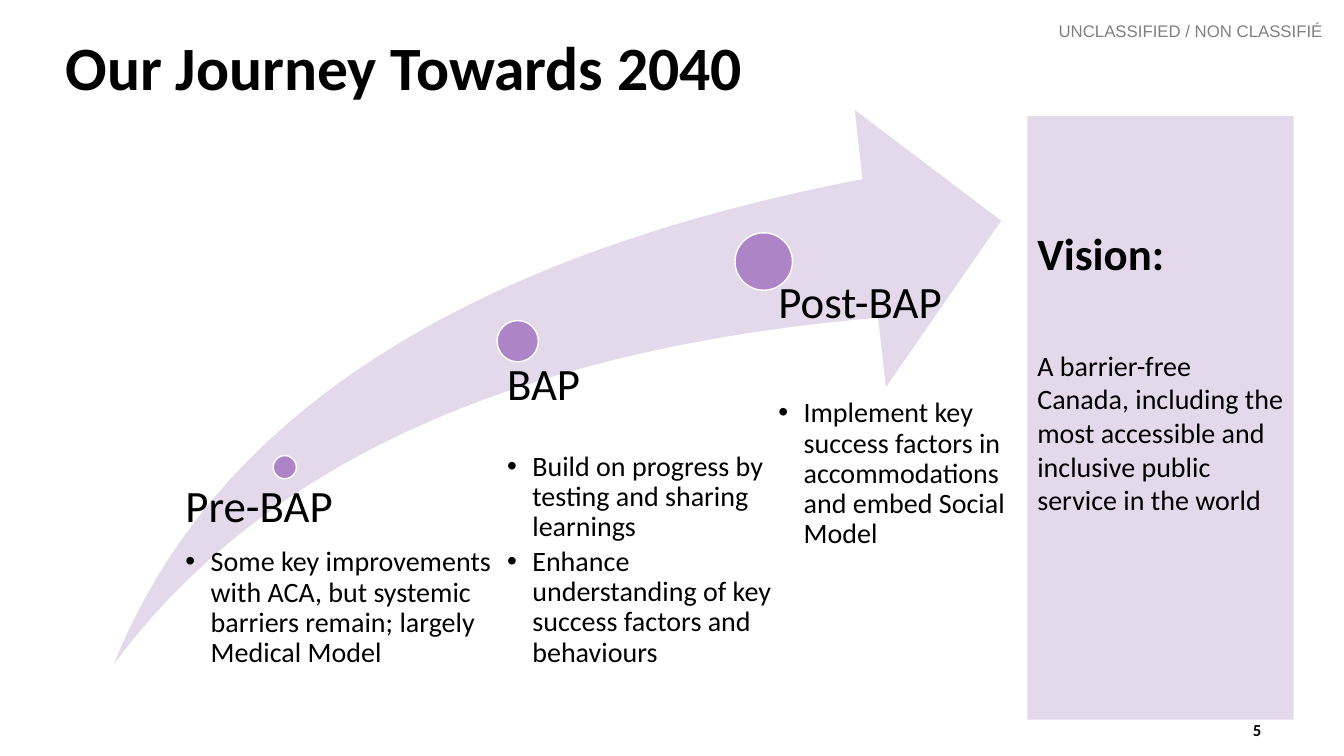
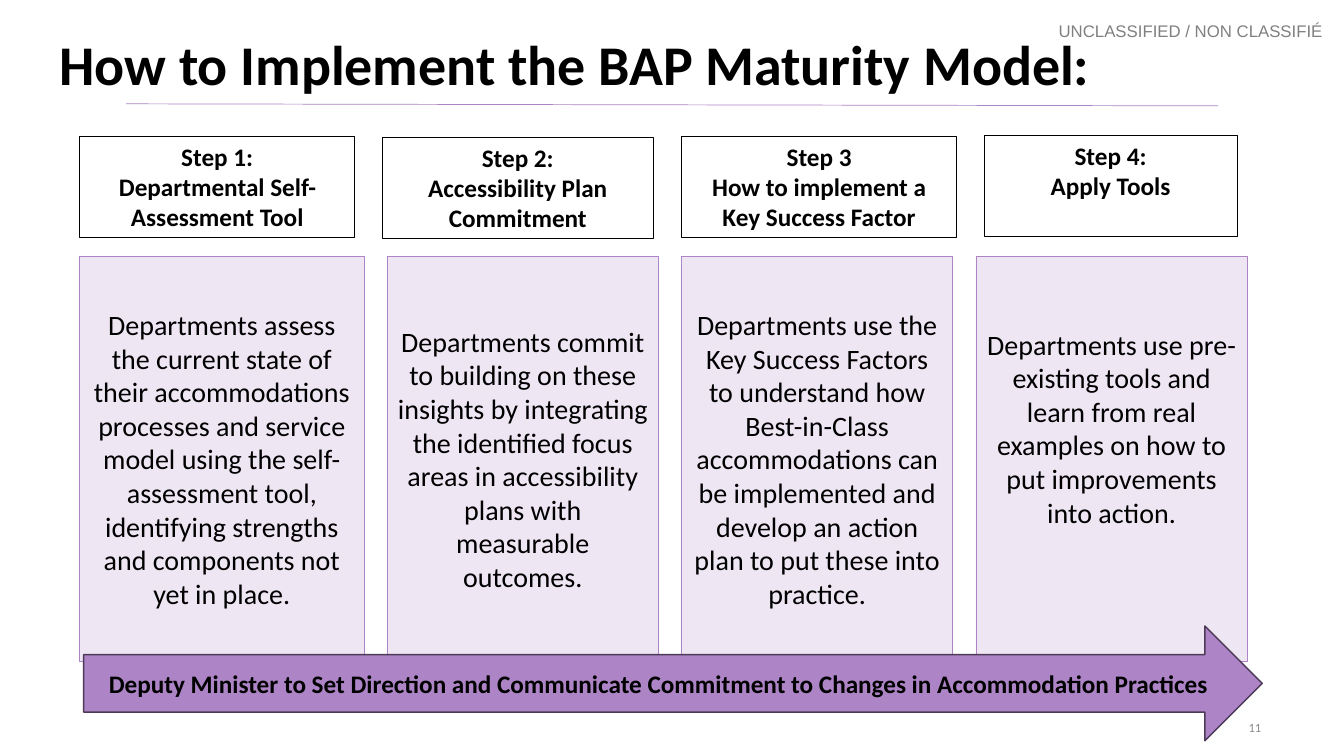
from lxml.etree import SubElement
from pptx import Presentation
from pptx.dml.color import RGBColor
from pptx.enum.shapes import MSO_CONNECTOR, MSO_SHAPE as SHAPE
from pptx.enum.text import MSO_ANCHOR as ANCHOR, MSO_AUTO_SIZE, PP_ALIGN as ALIGN
from pptx.oxml.ns import qn
from pptx.util import Emu, Pt

PX = 9144  # 100 px to the inch
BLACK, GREY, LIGHT_GREY, WHITE = "000000", "808080", "8C8C8C", "FFFFFF"
PURPLE, LILAC, PALE, PLUM = "AD84C6", "E3D9EA", "EFE6F4", "4C3A57"
MARGINS = (10, 5, 10, 5)
NO_MARGINS = (0, 0, 0, 0)


def px(length):
    return Emu(length * PX)


def color(code):
    return RGBColor.from_string(code)


def assign(target, values):
    for name, value in values.items():
        setattr(target, name, value)


def para(text, size, bold=False, ink=BLACK, font="Calibri", bullet=False, **layout):
    """Describe one paragraph; layout holds paragraph attributes."""
    return {"text": text, "ink": ink, "bullet": bullet, "layout": layout,
            "font": {"size": Pt(size), "bold": bold, "name": font}}


class Deck:
    def __init__(self):
        self.deck = Presentation()
        assign(self.deck, {"slide_width": px(1333), "slide_height": px(750)})
        self.page = None

    def start(self, title, box, size, number):
        """Add a page with its title, classification mark and page number."""
        self.page = self.deck.slides.add_slide(self.deck.slide_layouts[5])
        self.text((1050, 21, 267, 20),
                  [para("UNCLASSIFIED / NON CLASSIFIÉ", 12, ink=GREY, font="Arial")], NO_MARGINS)
        self.text((1197, 714, 54, 21), [number], NO_MARGINS)
        holder = self.page.shapes.title
        assign(holder, dict(zip(("left", "top", "width", "height"), map(px, box))))
        self.fill_text(holder, [para(title, size, True, line_spacing=0.9)], anchor=ANCHOR.MIDDLE)

    def fill_text(self, shape, paras, margins=MARGINS, anchor=ANCHOR.TOP, align=ALIGN.LEFT):
        frame = shape.text_frame
        assign(frame, {"word_wrap": True, "auto_size": MSO_AUTO_SIZE.NONE,
                       "vertical_anchor": anchor})
        sides = ("margin_left", "margin_top", "margin_right", "margin_bottom")
        assign(frame, dict(zip(sides, map(px, margins))))
        for index, item in enumerate(paras):
            line = frame.add_paragraph() if index else frame.paragraphs[0]
            assign(line, {"alignment": align, "space_before": Pt(0), **item["layout"]})
            span = line.add_run()
            span.text = item["text"]
            assign(span.font, item["font"])
            span.font.color.rgb = color(item["ink"])
            if item["bullet"]:
                props = line._p.get_or_add_pPr()
                props.set("marL", str(px(25)))
                props.set("indent", str(px(-25)))
                SubElement(props, qn("a:buFont"), typeface="Arial")
                SubElement(props, qn("a:buChar"), char="•")

    def text(self, box, paras, margins=MARGINS):
        self.fill_text(self.page.shapes.add_textbox(*map(px, box)), paras, margins)

    def shape(self, kind, box, fill=None, line=None, weight=1, paras=(), **style):
        shape = self.page.shapes.add_shape(kind, *map(px, box))
        shape.shadow.inherit = False
        if fill:
            shape.fill.solid()
            shape.fill.fore_color.rgb = color(fill)
        else:
            shape.fill.background()
        if line:
            shape.line.color.rgb = color(line)
            shape.line.width = Pt(weight)
        else:
            shape.line.fill.background()
        if paras:
            self.fill_text(shape, paras, **style)
        return shape

    def rule(self, start, end, ink, weight):
        line = self.page.shapes.add_connector(MSO_CONNECTOR.STRAIGHT, *map(px, start + end))
        line.line.color.rgb = color(ink)
        line.line.width = Pt(weight)
        SubElement(line._element.spPr, qn("a:effectLst"))


def journey(deck):
    deck.start("Our Journey Towards 2040", (55, 7, 1205, 125), 44, para("5", 12, True, alignment=ALIGN.RIGHT))

    # Rising arrow
    swoosh = deck.shape(SHAPE.SWOOSH_ARROW, (113, 109, 880, 550), LILAC)
    for index in range(2):
        swoosh.adjustments[index] = 0.25

    # Milestones: dot (left, top, size), text box, left margin, name, gap below it, points
    milestones = [
        ((271, 452, 23), (172, 480, 340, 184), 12, "Pre-BAP", 11,
         ["Some key improvements with ACA, but systemic barriers remain; largely Medical Model"]),
        ((493, 318, 41), (481, 359, 289, 299), 22, "BAP", 30,
         ["Build on progress by testing and sharing learnings",
          "Enhance understanding of key success factors and behaviours"]),
        ((729, 231, 57), (742, 278, 271, 382), 30, "Post-BAP", 50,
         ["Implement key success factors in accommodations and embed Social Model"]),
    ]
    for (left, top, size), box, margin, name, gap, points in milestones:
        deck.shape(SHAPE.OVAL, (left, top, size, size), PURPLE, WHITE)
        heading = para(name, 32, line_spacing=0.9, space_after=Pt(gap))
        bullets = [para(point, 20, bullet=True, line_spacing=0.9, space_after=Pt(3))
                   for point in points]
        deck.text(box, [heading] + bullets, (margin, 0, 0, 0))

    # Vision panel
    deck.shape(SHAPE.RECTANGLE, (1019, 115, 264, 599), LILAC, margins=(10, 109, 10, 5), paras=[
        para("Vision:", 32, True, space_after=Pt(49)),
        para("A barrier-free Canada, including the most accessible and inclusive public "
             "service in the world", 20)])


def maturity_model(deck):
    deck.start("How to Implement the BAP Maturity Model:", (49, 26, 1236, 82), 40,
               para("11", 9, ink=LIGHT_GREY, alignment=ALIGN.RIGHT))

    # Steps: heading box (left, top, width), panel (left, width), bottom margin, texts
    steps = [
        ((79, 135, 273), (79, 282), 5, "Step 1:", "Departmental Self-Assessment Tool",
         "Departments assess the current state of their accommodations processes and service "
         "model using the self-assessment tool, identifying strengths and components not yet "
         "in place."),
        ((379, 136, 269), (384, 269), 5, "Step 2:", "Accessibility Plan Commitment",
         "Departments commit to building on these insights by integrating the identified focus "
         "areas in accessibility plans with measurable outcomes."),
        ((676, 135, 273), (676, 269), 5, "Step 3", "How to implement a Key Success Factor",
         "Departments use the Key Success Factors to understand how Best-in-Class "
         "accommodations can be implemented and develop an action plan to put these into "
         "practice."),
        ((976, 134, 251), (968, 269), 66, "Step 4:", "Apply Tools",
         "Departments use pre-existing tools and learn from real examples on how to put "
         "improvements into action."),
    ]
    for heading_box, (left, width), bottom, step, name, detail in steps:
        deck.shape(SHAPE.RECTANGLE, heading_box + (101,), None, BLACK, 0.75,
                   [para(step, 18, True), para(name, 18, True)], align=ALIGN.CENTER)
        deck.shape(SHAPE.RECTANGLE, (left, 254, width, 402), PALE, PURPLE, 0.5,
                   [para(detail, 20)], margins=(10, 5, 10, bottom),
                   anchor=ANCHOR.MIDDLE, align=ALIGN.CENTER)

    # Arrow below the steps and rule under the title
    deck.shape(SHAPE.RIGHT_ARROW, (83, 621, 1169, 114), PURPLE, PLUM, 1,
               [para("Deputy Minister to Set Direction and Communicate Commitment to Changes "
                     "in Accommodation Practices", 18, True)],
               anchor=ANCHOR.MIDDLE, align=ALIGN.CENTER)
    deck.rule((125, 103), (1208, 105), PURPLE, 0.5)


def main():
    deck = Deck()
    journey(deck)
    maturity_model(deck)
    deck.deck.save("out.pptx")


if __name__ == "__main__":
    main()
